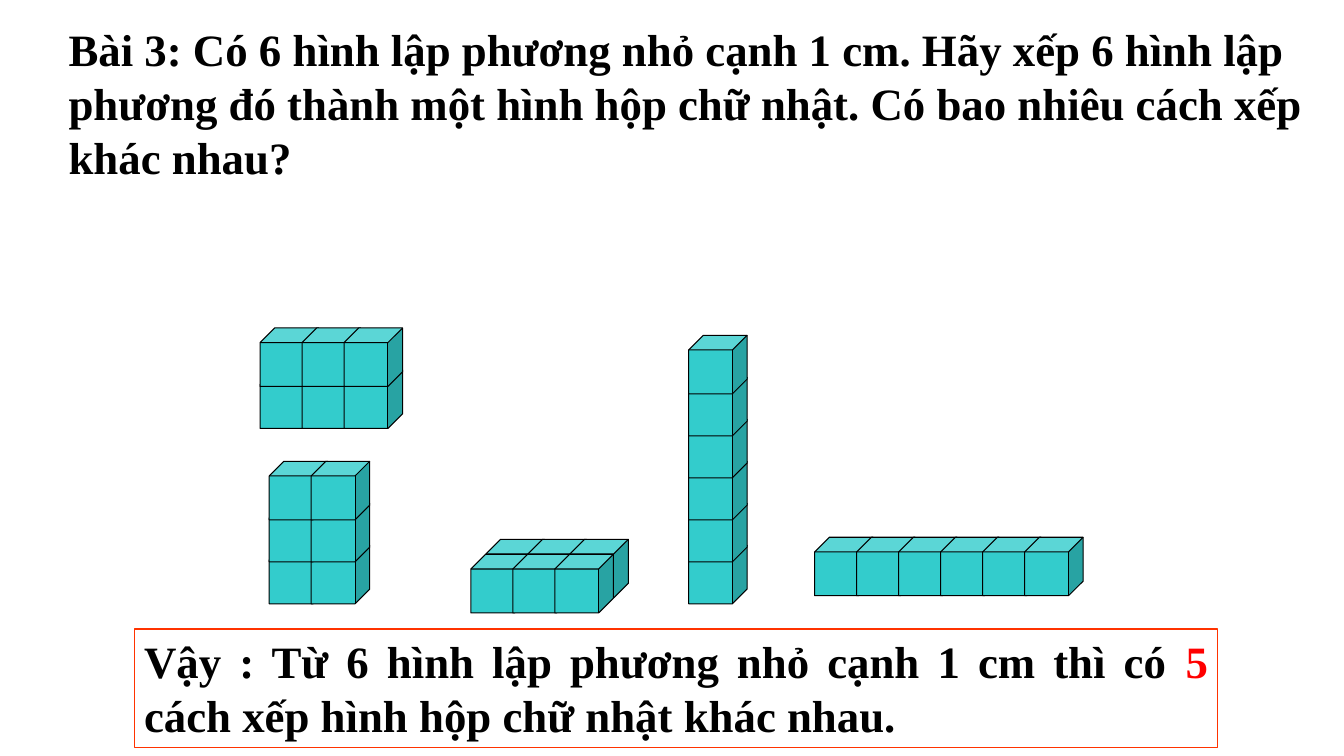
from dataclasses import dataclass

from pptx import Presentation
from pptx.dml.color import RGBColor
from pptx.enum.shapes import MSO_SHAPE
from pptx.enum.text import MSO_ANCHOR, MSO_AUTO_SIZE, PP_ALIGN
from pptx.shapes.base import BaseShape
from pptx.slide import Slide
from pptx.text.text import TextFrame
from pptx.util import Inches, Pt

COLORS = {"cube": "33CCCC", "ink": "000000", "frame": "FF3300", "count": "FF0000"}
SIDE = 0.58
STEP = 5 / 12
DEPTH = 0.15


@dataclass
class Pile:
    """Box of cubes, placed by its front bottom left cube."""
    left: float
    top: float
    cols: int
    rows: int
    deep: int = 1


@dataclass
class Part:
    """Piece of text in one colour."""
    text: str
    color: str = "ink"


PILES = [
    Pile(4.67, 5.5, 3, 1, 2),
    Pile(8.08, 5.33, 6, 1),
    Pile(6.83, 5.41, 1, 6),
    Pile(2.58, 3.67, 3, 2),
    Pile(2.67, 5.41, 2, 3),
]
TASK = [Part(
    "Bài 3: Có 6 hình lập phương nhỏ cạnh 1 cm. Hãy xếp 6 hình lập phương đó "
    "thành một hình hộp chữ nhật. Có bao nhiêu cách xếp khác nhau?"
)]
ANSWER = [
    Part("Vậy : Từ 6 hình lập phương nhỏ cạnh 1 cm thì có "),
    Part("5", "count"),
    Part(" cách xếp hình hộp chữ nhật khác nhau."),
]


def tint(name: str) -> RGBColor:
    """Look up a colour."""
    return RGBColor.from_string(COLORS[name])


def edge(shape: BaseShape, name: str) -> None:
    """Give a shape a thin line and no shadow."""
    shape.shadow.inherit = False
    shape.line.color.rgb = tint(name)
    shape.line.width = Pt(0.75)


def stack(slide: Slide, pile: Pile) -> None:
    """Draw one pile from back to front as a group."""
    group = slide.shapes.add_group_shape()
    for back in reversed(range(pile.deep)):
        for row in range(pile.rows):
            for col in range(pile.cols):
                left = pile.left + col * STEP + back * DEPTH
                top = pile.top - row * STEP - back * DEPTH
                cube = group.shapes.add_shape(
                    MSO_SHAPE.CUBE, Inches(left), Inches(top),
                    Inches(SIDE), Inches(SIDE))
                cube.adjustments[0] = 0.25
                cube.fill.solid()
                cube.fill.fore_color.rgb = tint("cube")
                edge(cube, "ink")


def write(frame: TextFrame, parts: list[Part], align: PP_ALIGN) -> None:
    """Fill a frame with bold coloured text."""
    frame.word_wrap = True
    frame.auto_size = MSO_AUTO_SIZE.SHAPE_TO_FIT_TEXT
    frame.vertical_anchor = MSO_ANCHOR.TOP
    para = frame.paragraphs[0]
    para.alignment = align
    for part in parts:
        run = para.add_run()
        run.text = part.text
        run.font.name = "Times New Roman"
        run.font.size = Pt(32)
        run.font.bold = True
        run.font.color.rgb = tint(part.color)


def main() -> None:
    """Build and save the slide."""
    deck = Presentation()
    deck.slide_width, deck.slide_height = Inches(13.33), Inches(7.5)
    slide = deck.slides.add_slide(deck.slide_layouts[5])

    title = slide.shapes.title
    title.left, title.top = Inches(0.58), Inches(0.17)
    title.width, title.height = Inches(12.67), Inches(1.72)
    write(title.text_frame, TASK, PP_ALIGN.LEFT)

    for pile in PILES:
        stack(slide, pile)

    box = slide.shapes.add_shape(
        MSO_SHAPE.RECTANGLE, Inches(1.33), Inches(6.24),
        Inches(10.75), Inches(1.18))
    box.fill.background()
    edge(box, "frame")
    write(box.text_frame, ANSWER, PP_ALIGN.JUSTIFY)

    deck.save("out.pptx")


if __name__ == "__main__":
    main()
